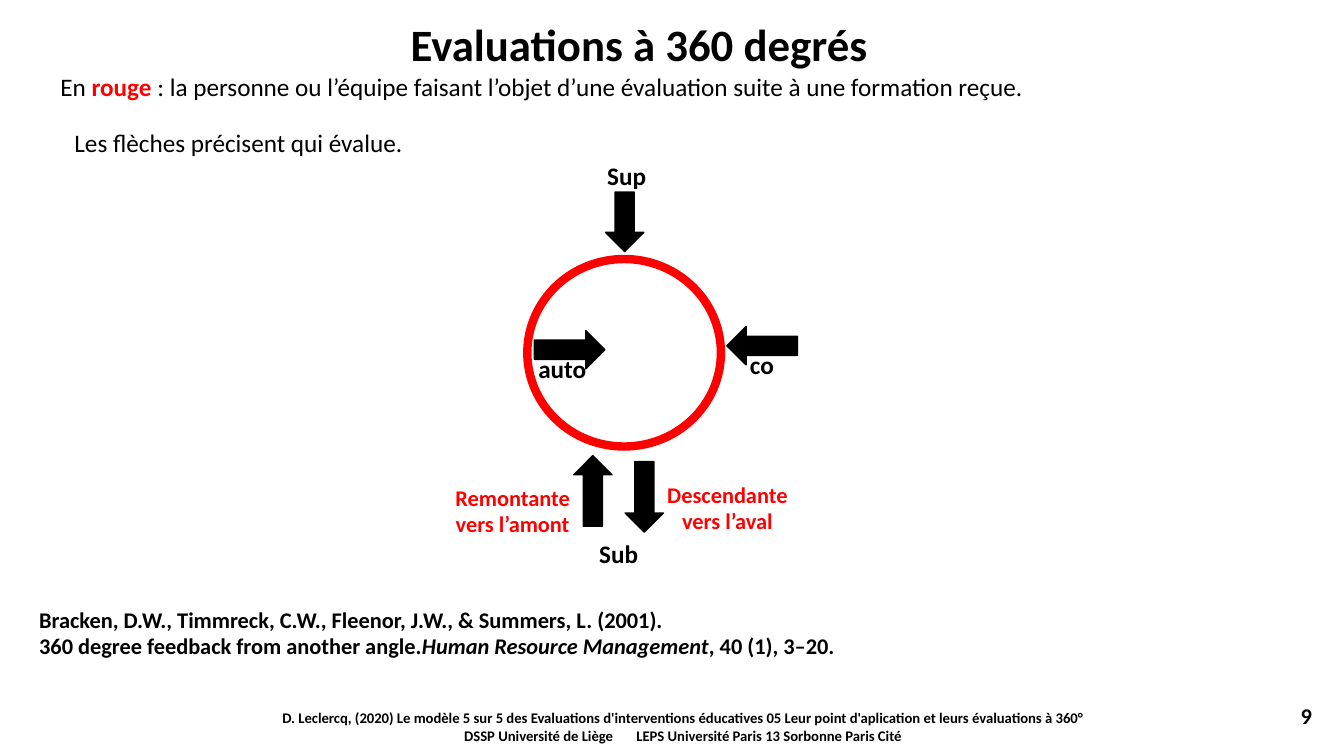
from dataclasses import dataclass

from pptx import Presentation
from pptx.dml.color import RGBColor
from pptx.enum.shapes import MSO_SHAPE
from pptx.enum.text import MSO_ANCHOR, MSO_AUTO_SIZE, PP_ALIGN
from pptx.util import Pt

PX = 9144  # 100 px to the inch
LEFT, MID, RIGHT = PP_ALIGN.LEFT, PP_ALIGN.CENTER, PP_ALIGN.RIGHT
OVAL, ARROW = MSO_SHAPE.OVAL, MSO_SHAPE.RIGHT_ARROW
CENTRE = MSO_ANCHOR.MIDDLE
GROW = MSO_AUTO_SIZE.SHAPE_TO_FIT_TEXT


@dataclass(frozen=True)
class Theme:
    font: str = "Calibri"
    ink: RGBColor = RGBColor(0, 0, 0)
    red: RGBColor = RGBColor(255, 0, 0)
    title: float = 32
    body: float = 18
    note: float = 16
    foot: float = 10.5


class Board:
    def __init__(self, slide, theme):
        self.slide = slide
        self.theme = theme

    def style(self, run, size, color=None, bold=True, italic=False):
        font = run.font
        font.name = self.theme.font
        font.size = Pt(size)
        font.bold = bold
        font.italic = italic
        font.color.rgb = color or self.theme.ink

    def text(self, box, lines, size, align=LEFT, wrap=False, fixed=False, **look):
        """Each line is a string, or a list of (string, own look) parts."""
        frame = self.slide.shapes.add_textbox(*(n * PX for n in box)).text_frame
        frame.word_wrap = wrap
        if fixed:
            frame.vertical_anchor = CENTRE
        else:
            frame.auto_size = GROW
        for i, line in enumerate(lines):
            para = frame.add_paragraph() if i else frame.paragraphs[0]
            para.alignment = align
            parts = [(line, {})] if isinstance(line, str) else line
            for words, own in parts:
                run = para.add_run()
                run.text = words
                self.style(run, size, **{**look, **own})
        return frame

    def shape(self, kind, box, width, line, fill=None, turn=0):
        item = self.slide.shapes.add_shape(kind, *(n * PX for n in box))
        item.shadow.inherit = False
        item.rotation = turn
        item.line.color.rgb = line
        item.line.width = Pt(width)
        if fill is None:
            item.fill.background()
        else:
            item.fill.solid()
            item.fill.fore_color.rgb = fill

    def ring(self, box):
        self.shape(OVAL, box, 6, self.theme.red)

    def arrow(self, left, top, turn, length=70):
        ink = self.theme.ink
        self.shape(ARROW, (left, top, length, 38), 1, ink, ink, turn)


def footer(board):
    theme = board.theme
    frame = board.text((256, 701, 843, 40), [[
        ("D. Leclercq, (2020) Le modèle 5 sur 5 des Evaluations d'interventions "
         "éducatives 05 Leur point d'aplication et leurs évaluations à 360° "
         "DSSP Université de Liège", {}),
        (" ", {}),
        ("LEPS Université Paris 13 Sorbonne Paris Cité", {}),
    ]], theme.foot, MID, wrap=True, fixed=True)
    # Letter spacing widens the gap between the two institutions
    gap = frame.paragraphs[0].runs[1]
    gap.font._element.set("spc", "1420")
    board.text((1242, 690, 69, 40), ["9"], theme.note, RIGHT, wrap=True, fixed=True)


def wheel(board):
    theme = board.theme
    board.ring((523, 257, 192, 186))
    for left, top, turn in (
        (530, 328, 0), (553, 468, 270), (721, 324, 180), (604, 474, 90),
    ):
        board.arrow(left, top, turn)
    board.arrow(590, 201, 90, length=59)

    for word, left, top, width, align in (
        ("auto", 524, 346, 68, LEFT),
        ("co", 734, 342, 44, LEFT),
        ("Sup", 592, 154, 59, MID),
        ("Sub", 584, 529, 59, MID),
    ):
        board.text((left, top, width, 40), [word], theme.body, align)

    for lines, left, top, width in (
        (["Remontante", "vers l’amont"], 440, 475, 137),
        (["Descendante", "vers l’aval"], 651, 472, 141),
    ):
        board.text((left, top, width, 64), lines, theme.note, MID, color=theme.red)


def main():
    deck = Presentation()
    deck.slide_width, deck.slide_height = 1333 * PX, 750 * PX
    theme = Theme()
    board = Board(deck.slides.add_slide(deck.slide_layouts[6]), theme)

    footer(board)
    board.text((29, 596, 1096, 64), [
        "Bracken, D.W., Timmreck, C.W., Fleenor, J.W., & Summers, L. (2001).",
        [("360 degree feedback from another angle.", {}),
         ("Human Resource Management", {"italic": True}),
         (", 40 (1), 3–20.", {})],
    ], theme.note, wrap=True)
    board.text((395, 12, 488, 64), ["Evaluations à 360 degrés "], theme.title, MID)
    wheel(board)
    board.text((50, 66, 1030, 40), [[
        ("En ", {}),
        ("rouge ", {"color": theme.red, "bold": True}),
        (": la personne ou l’équipe faisant l’objet d’une évaluation "
         "suite à une formation reçue.", {}),
    ]], theme.body, bold=False)
    board.text((64, 121, 350, 40), ["Les flèches précisent qui évalue."],
               theme.body, bold=False)
    deck.save("out.pptx")


if __name__ == "__main__":
    main()
